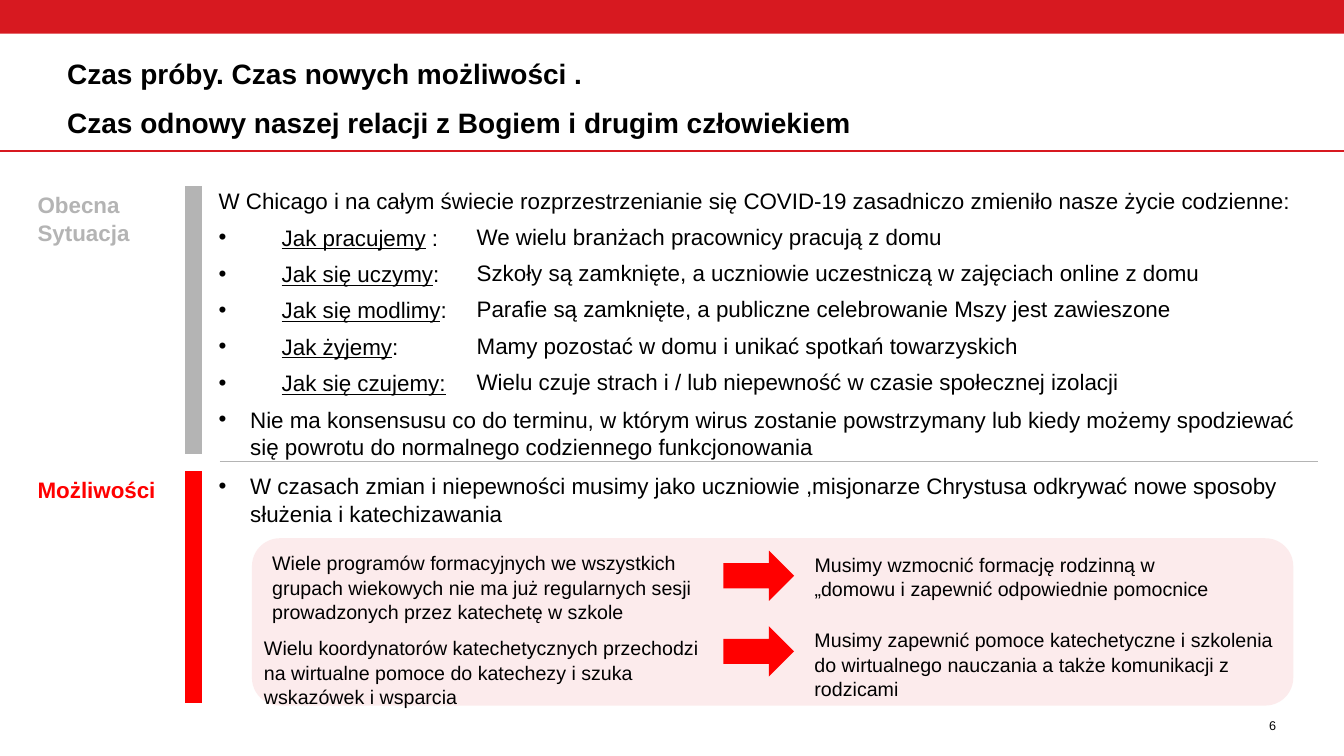
from dataclasses import dataclass

from lxml import etree
from pptx import Presentation
from pptx.dml.color import RGBColor
from pptx.enum import shapes, text
from pptx.oxml import ns
from pptx.util import Pt

RED = RGBColor(0xFF, 0x00, 0x00)
CRIMSON = RGBColor(0xD7, 0x19, 0x20)
PINK = RGBColor(0xF9, 0xCF, 0xD0)
GREY = RGBColor(0xB4, 0xB4, 0xB4)
BLACK = RGBColor(0, 0, 0)
FONT = "Arial"
LEADING = 1.04
LINE = 19.15  # height of one 16 pt line
GAP = 6
BODY = 156.24  # left edge of the main column
INDENT = 22.5


@dataclass
class Box:
    left: float
    top: float
    width: float
    height: float


@dataclass
class Style:
    size: float = 16
    color: RGBColor = BLACK
    bold: bool = False
    after: float = GAP
    spacing: float | Pt = LEADING
    align: text.PP_ALIGN = text.PP_ALIGN.LEFT


@dataclass
class Part:
    label: str
    color: RGBColor
    top: float
    height: float


@dataclass
class Habit:
    term: str
    mark: str
    change: str


@dataclass
class Note:
    words: str
    box: Box


PARTS = [
    Part("Obecna\nSytuacja", GREY, 133.2, 191.2),
    Part("Możliwości", RED, 336.6, 165.6),
]
INTRO = ("W Chicago i na całym świecie rozprzestrzenianie się COVID-19 "
         "zasadniczo zmieniło nasze życie codzienne:")
HABITS = [
    Habit("Jak pracujemy", " :", "We wielu branżach pracownicy pracują z domu"),
    Habit("Jak się uczymy", ":",
          "Szkoły są zamknięte, a uczniowie uczestniczą w zajęciach online z domu"),
    Habit("Jak się modlimy", ":",
          "Parafie są zamknięte, a publiczne celebrowanie Mszy jest zawieszone"),
    Habit("Jak żyjemy", ":", "Mamy pozostać w domu i unikać spotkań towarzyskich"),
    Habit("Jak się czujemy:", "",
          "Wielu czuje strach i / lub niepewność w czasie społecznej izolacji"),
]
DOUBT = ("Nie ma konsensusu co do terminu, w którym wirus zostanie powstrzymany "
         "lub kiedy możemy spodziewać się powrotu do normalnego codziennego "
         "funkcjonowania")
CHANCE = ("W czasach zmian i niepewności musimy jako uczniowie ,misjonarze "
          "Chrystusa odkrywać nowe sposoby służenia i katechizawania")
NOTES = [
    Note("Wiele programów formacyjnych we wszystkich grupach wiekowych nie ma już "
         "regularnych sesji prowadzonych przez katechetę w szkole",
         Box(194.4, 393.1, 310.3, 51.1)),
    Note("Musimy wzmocnić formację rodzinną w „domowu i zapewnić odpowiednie "
         "pomocnice", Box(581.8, 394.2, 288.7, 33.8)),
    Note("Wielu koordynatorów katechetycznych przechodzi na wirtualne pomoce do "
         "katechezy i szuka wskazówek i wsparcia", Box(188.6, 453.6, 326.9, 51.1)),
    Note("Musimy zapewnić pomoce katechetyczne i szkolenia do wirtualnego nauczania "
         "a także komunikacji z rodzicami", Box(581.8, 447.9, 336.2, 51.1)),
]

deck = Presentation()
deck.slide_width, deck.slide_height = Pt(960), Pt(540)
slide = deck.slides.add_slide(deck.slide_layouts[6])


def shade(kind: shapes.MSO_SHAPE, box: Box, color: RGBColor, alpha: int = 100) -> None:
    """Draw a plain filled shape; alpha is its opacity in percent."""
    form = slide.shapes.add_shape(
        kind, Pt(box.left), Pt(box.top), Pt(box.width), Pt(box.height))
    form.shadow.inherit = False
    form.line.fill.background()
    form.fill.solid()
    form.fill.fore_color.rgb = color
    if alpha < 100:
        tint = form.fill._xPr.find(".//" + ns.qn("a:srgbClr"))
        etree.SubElement(tint, ns.qn("a:alpha")).set("val", str(alpha * 1000))


def rule(x1: float, y1: float, x2: float, y2: float,
         color: RGBColor, width: float) -> None:
    """Draw a straight line."""
    line = slide.shapes.add_connector(
        shapes.MSO_CONNECTOR.STRAIGHT, Pt(x1), Pt(y1), Pt(x2), Pt(y2))
    line.line.color.rgb = color
    line.line.width = Pt(width)
    etree.SubElement(line._element.spPr, ns.qn("a:effectLst"))


def write(words: str, box: Box, style: Style, inset: float = 0):
    """Add a text box with one paragraph per line and return its frame."""
    frame = slide.shapes.add_textbox(
        Pt(box.left), Pt(box.top), Pt(box.width), Pt(box.height)).text_frame
    frame.word_wrap = True
    frame.margin_left = frame.margin_right = Pt(inset)
    frame.margin_top = frame.margin_bottom = Pt(inset)
    frame.text = words
    for para in frame.paragraphs:
        para.alignment = style.align
        para.line_spacing = style.spacing
        para.space_after = Pt(style.after)
        for run in para.runs:
            dress(run, style)
    return frame


def dress(run, style: Style) -> None:
    """Apply the font of a style to a run."""
    run.font.name = FONT
    run.font.size = Pt(style.size)
    run.font.bold = style.bold
    run.font.color.rgb = style.color


def bullet(para, indent: float) -> None:
    props = para._p.get_or_add_pPr()
    props.set("marL", str(Pt(indent)))
    props.set("indent", str(-Pt(indent)))
    etree.SubElement(props, ns.qn("a:buFont")).set("typeface", FONT)
    etree.SubElement(props, ns.qn("a:buChar")).set("char", "•")


def main() -> None:
    plain = Style()
    rule(0, 108, 960, 108, CRIMSON, 1.5)
    shade(shapes.MSO_SHAPE.RECTANGLE, Box(0, 0, 960, 24), CRIMSON)
    shade(shapes.MSO_SHAPE.ROUNDED_RECTANGLE, Box(180, 384.5, 743.8, 119.5), PINK, 40)

    title = write("Czas próby. Czas nowych możliwości .\n"
                  "Czas odnowy naszej relacji z Bogiem i drugim człowiekiem",
                  Box(48, 29.4, 864, 70),
                  Style(size=20, bold=True, after=0, spacing=Pt(35)))
    title.vertical_anchor = text.MSO_ANCHOR.BOTTOM
    write("6", Box(873.4, 512.6, 38.2, 13),
          Style(size=9, after=0, spacing=1.0, align=text.PP_ALIGN.RIGHT))

    for part in PARTS:
        write(part.label, Box(24, part.top, 114, part.height),
              Style(color=part.color, bold=True, after=0), inset=2.9)
        rule(138.2, part.top, 138.2, part.top + part.height, part.color, 12)

    top = PARTS[0].top
    terms = [habit.term for habit in HABITS]
    facts = write("\n".join([INTRO, *terms, DOUBT]),
                  Box(BODY, top, 779.8, 191.5), plain)
    for para, habit in zip(facts.paragraphs[1:], HABITS):
        bullet(para, 2 * INDENT)
        para.runs[0].font.underline = True
        if habit.mark:
            mark = para.add_run()
            mark.text = habit.mark
            dress(mark, plain)
    bullet(facts.paragraphs[-1], INDENT)

    step = LINE + GAP
    write("\n".join(habit.change for habit in HABITS),
          Box(340.5, top + step, 595, step * len(HABITS)), plain)

    rule(157, 329.8, 941.8, 329.8, GREY, 0.75)
    chance = write(CHANCE, Box(BODY, PARTS[1].top, 779.8, 38.9), plain)
    bullet(chance.paragraphs[0], INDENT)

    for row in range(2):
        shade(shapes.MSO_SHAPE.RIGHT_ARROW, Box(516.8, 393.3 + 54 * row, 50.4, 36), RED)
    for note in NOTES:
        write(note.words, note.box, Style(size=14))

    deck.save("out.pptx")


if __name__ == "__main__":
    main()
